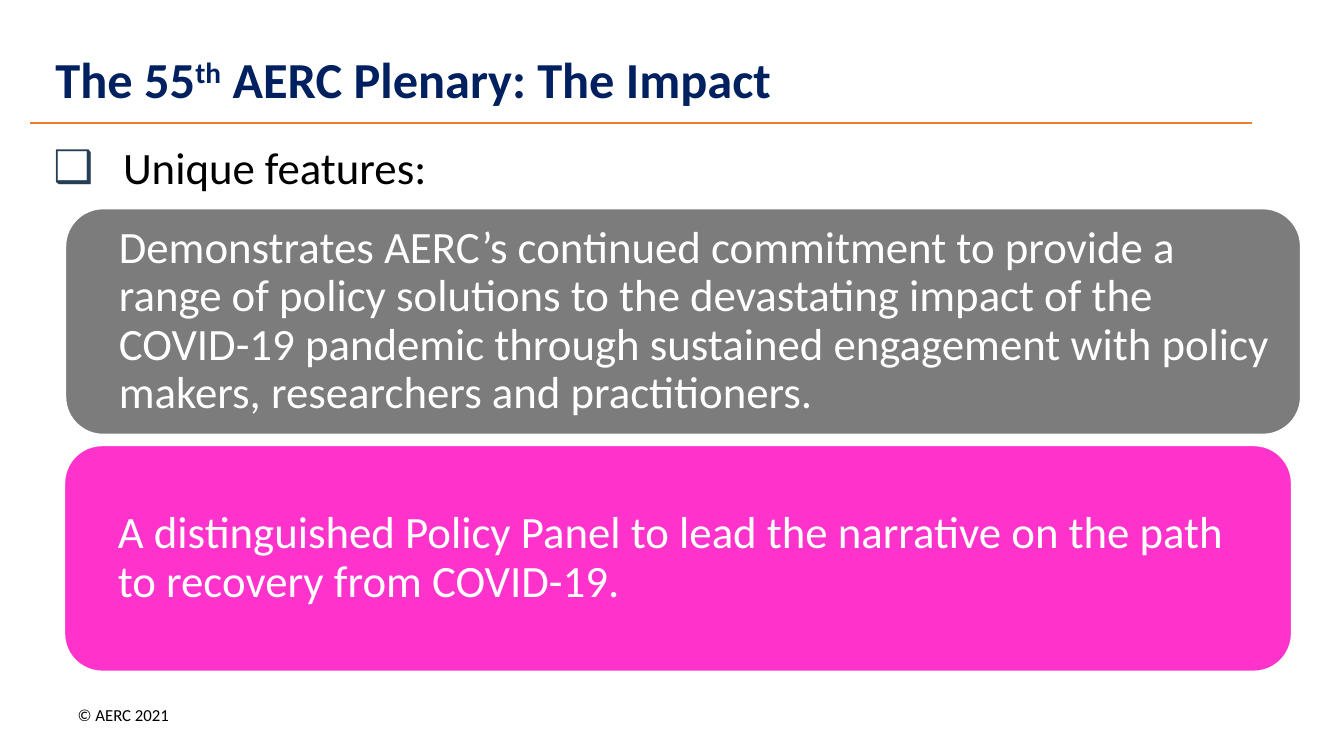
"""Build the plenary impact slide with its two feature cards."""
from dataclasses import dataclass

import lxml.etree
import pptx
import pptx.dml.color
import pptx.enum.shapes
import pptx.enum.text
import pptx.oxml
import pptx.oxml.ns
import pptx.shapes.base
import pptx.slide
import pptx.text.text
import pptx.util

Inches = pptx.util.Inches
Pt = pptx.util.Pt


@dataclass(frozen=True)
class Theme:
    face: str = "Calibri"
    navy: str = "002060"
    mark: str = "263D56"
    rule: str = "ED7D31"
    gray: str = "7C7C7C"
    pink: str = "FF33CC"
    black: str = "000000"
    white: str = "FFFFFF"
    head: int = 36
    body: int = 32
    note: int = 12


@dataclass(frozen=True)
class Card:
    left: float
    top: float
    width: float
    fill: str
    text: str


THEME = Theme()
HIGH = 2.24
CARDS = [
    Card(0.65, 2.07, 12.25, THEME.gray,
         "Demonstrates AERC’s continued commitment to provide a range of policy "
         "solutions to the devastating impact of the COVID-19 pandemic through "
         "sustained engagement with policy makers, researchers and practitioners."),
    Card(0.64, 4.42, 12.17, THEME.pink,
         "A distinguished Policy Panel to lead the narrative on the path to "
         "recovery from COVID-19."),
]


def tint(code: str) -> pptx.dml.color.RGBColor:
    return pptx.dml.color.RGBColor.from_string(code)


def style(para: pptx.text.text._Paragraph, size: int, color: str, bold: bool = False) -> None:
    para.alignment = pptx.enum.text.PP_ALIGN.LEFT
    for run in para.runs:
        run.font.name = THEME.face
        run.font.size = Pt(size)
        run.font.bold = bold
        run.font.color.rgb = tint(color)


def place(shape: pptx.shapes.base.BaseShape, left: float, top: float,
          width: float, height: float) -> None:
    shape.left, shape.top = Inches(left), Inches(top)
    shape.width, shape.height = Inches(width), Inches(height)


def indent(para: pptx.text.text._Paragraph, left: float, first: float) -> None:
    props = para._p.get_or_add_pPr()
    props.set("marL", str(Inches(left)))
    props.set("indent", str(Inches(first)))


def add_note(slide: pptx.slide.Slide) -> None:
    box = slide.shapes.add_textbox(Inches(0.72), Inches(6.94), Inches(2.07), Inches(0.3))
    frame = box.text_frame
    frame.word_wrap = True
    frame.margin_left = frame.margin_right = Inches(0.05)
    frame.margin_top = frame.margin_bottom = Inches(0.05)
    frame.text = "© AERC 2021"
    style(frame.paragraphs[0], THEME.note, THEME.black)


def add_rule(slide: pptx.slide.Slide) -> None:
    line = slide.shapes.add_connector(
        pptx.enum.shapes.MSO_CONNECTOR.STRAIGHT,
        Inches(0.3), Inches(1.22), Inches(12.42), Inches(1.22))
    line.line.color.rgb = tint(THEME.rule)
    line.line.width = Pt(1.5)
    lxml.etree.SubElement(line._element.spPr, pptx.oxml.ns.qn("a:effectLst"))


def fill_title(slide: pptx.slide.Slide) -> None:
    title = slide.shapes.title
    place(title, 0.45, 0.42, 11.75, 0.8)
    frame = title.text_frame
    frame.auto_size = pptx.enum.text.MSO_AUTO_SIZE.NONE
    frame.vertical_anchor = pptx.enum.text.MSO_ANCHOR.MIDDLE
    para = frame.paragraphs[0]
    para.line_spacing = 0.9
    for text in ("The 55", "th", " AERC Plenary: The Impact"):
        para.add_run().text = text
    style(para, THEME.head, THEME.navy, True)
    para.runs[1]._r.get_or_add_rPr().set("baseline", "30000")


def fill_body(slide: pptx.slide.Slide) -> None:
    body = slide.placeholders[1]
    place(body, 0.43, 1.34, 12.72, 5.52)
    frame = body.text_frame
    frame.auto_size = pptx.enum.text.MSO_AUTO_SIZE.NONE
    frame.text = "Unique features:"
    para = frame.paragraphs[0]
    para.space_before = Pt(0)
    para.space_after = Pt(6)
    indent(para, 0.69, -0.69)
    props = para._p.get_or_add_pPr()
    space = pptx.oxml.ns.nsdecls("a")
    for mark in (f'<a:buClr {space}><a:srgbClr val="{THEME.mark}"/></a:buClr>',
                 f'<a:buChar {space} char="❑"/>'):
        props.append(pptx.oxml.parse_xml(mark))
    style(para, THEME.body, THEME.black)


def add_card(slide: pptx.slide.Slide, card: Card) -> None:
    shape = slide.shapes.add_shape(
        pptx.enum.shapes.MSO_SHAPE.ROUNDED_RECTANGLE,
        Inches(card.left), Inches(card.top), Inches(card.width), Inches(HIGH))
    shape.shadow.inherit = False
    shape.fill.solid()
    shape.fill.fore_color.rgb = tint(card.fill)
    shape.line.color.rgb = tint(THEME.white)
    shape.line.width = Pt(1)
    frame = shape.text_frame
    frame.word_wrap = True
    frame.vertical_anchor = pptx.enum.text.MSO_ANCHOR.MIDDLE
    frame.margin_left = frame.margin_right = Inches(0.13)
    frame.margin_top = frame.margin_bottom = Inches(0.07)
    frame.text = card.text
    para = frame.paragraphs[0]
    para.line_spacing = 0.9
    indent(para, 0.29, 0)
    style(para, THEME.body, THEME.white)


def main() -> None:
    deck = pptx.Presentation()
    deck.slide_width, deck.slide_height = Inches(13.33), Inches(7.5)
    slide = deck.slides.add_slide(deck.slide_layouts[1])
    fill_title(slide)
    fill_body(slide)
    add_note(slide)
    add_rule(slide)
    for card in CARDS:
        add_card(slide, card)
    deck.save("out.pptx")


if __name__ == "__main__":
    main()
